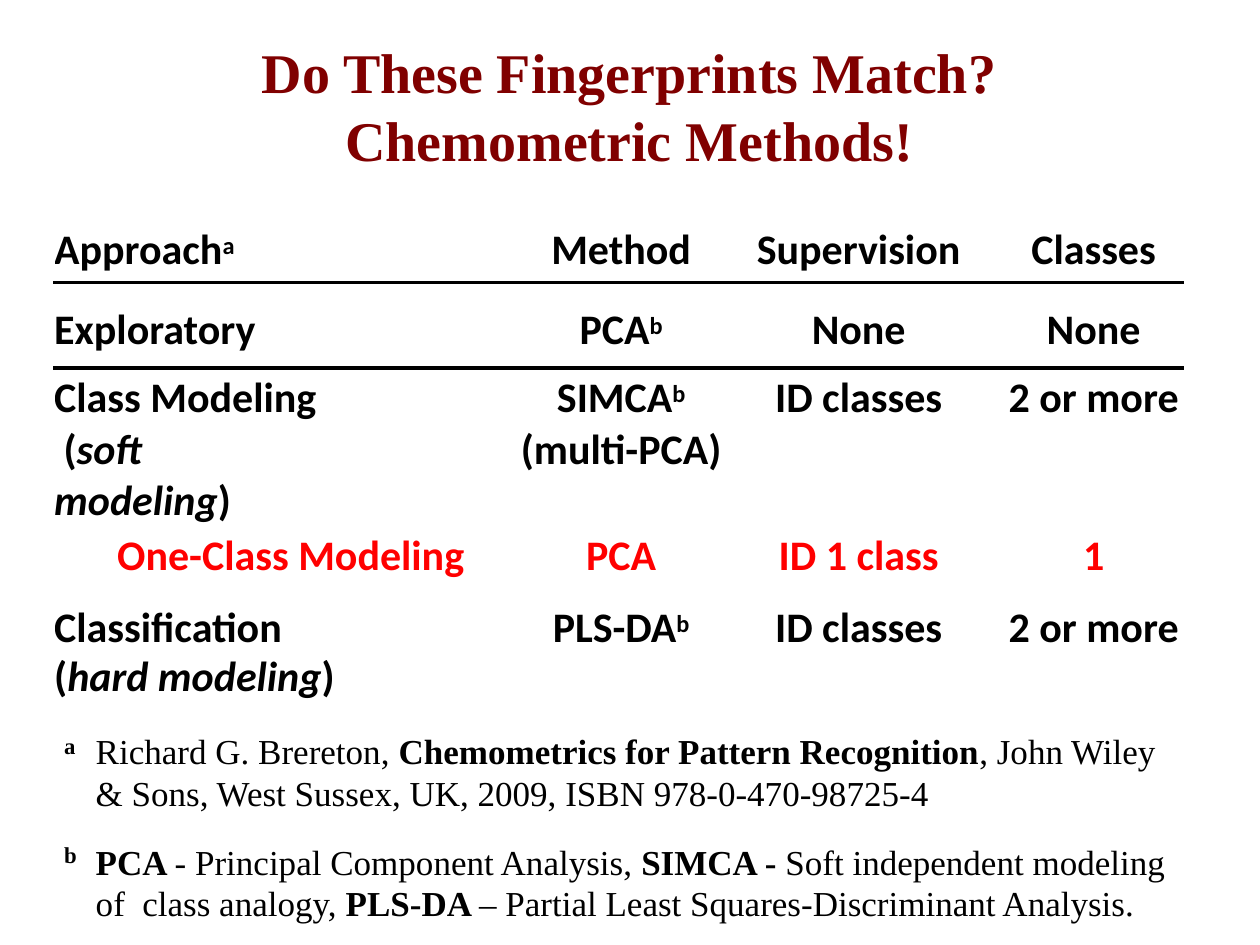
from dataclasses import dataclass

from lxml.etree import SubElement
from pptx import Presentation
from pptx.dml.color import RGBColor
from pptx.enum.text import PP_ALIGN
from pptx.oxml.ns import qn
from pptx.util import Inches, Pt

BLACK, RED, MAROON = "000000", "FF0000", "800000"
SERIF, SANS = "Times New Roman", "Calibri"


@dataclass
class Bit:
    text: str
    bold: bool = True
    slant: bool = False
    sup: bool = False


@dataclass
class Para:
    bits: list[Bit]
    indent: float = 0
    before: float = 0
    line: float | None = None
    align: PP_ALIGN = PP_ALIGN.LEFT


@dataclass
class Row:
    cells: list[list[list[Bit]]]
    high: float
    top: float = 0
    line: float | None = None
    color: str = BLACK
    indent: float = 0
    right: float = 0
    ruled: bool = False


def paint(font, color: str) -> None:
    font.color.rgb = RGBColor.from_string(color)


def write(frame, paras: list[Para], face: str, size: float, color: str) -> None:
    for i, item in enumerate(paras):
        para = frame.add_paragraph() if i else frame.paragraphs[0]
        para.alignment = item.align
        para.space_before = Pt(item.before if i else 0)
        if item.line:
            para.line_spacing = Pt(item.line)
        para._p.get_or_add_pPr().set("marL", str(Inches(item.indent)))
        for bit in item.bits:
            run = para.add_run()
            run.text = bit.text
            font = run.font
            font.name, font.size = face, Pt(size)
            font.bold, font.italic = bit.bold, bit.slant
            paint(font, color)
            if bit.sup:
                run._r.get_or_add_rPr().set("baseline", "24000")


def inset(item, top: float, right: float = 0) -> None:
    item.margin_left = item.margin_bottom = 0
    item.margin_top, item.margin_right = Inches(top), Inches(right)


def add_box(slide, spot: tuple, top: float, paras: list[Para], face: str,
            size: float, color: str, right: float = 0) -> None:
    frame = slide.shapes.add_textbox(*map(Inches, spot)).text_frame
    frame.word_wrap = True
    inset(frame, top, right)
    write(frame, paras, face, size, color)


def rule(cell) -> None:
    line = SubElement(cell._tc.get_or_add_tcPr(), qn("a:lnB"), w=str(Pt(2.25)))
    fill = SubElement(line, qn("a:solidFill"))
    SubElement(fill, qn("a:srgbClr"), val=BLACK)


def add_grid(slide, rows: list[Row]) -> None:
    widths, indents = [3.48, 1.95, 1.95, 1.58], [0, 0.09, 0, 0.16]
    rights = [0, 0, 0.04, 0]
    spot = map(Inches, (0.43, 1.78, sum(widths), sum(r.high for r in rows)))
    grid = slide.shapes.add_table(len(rows), len(widths), *spot).table
    grid.first_row = grid.horz_banding = False
    for col, width in zip(grid.columns, widths):
        col.width = Inches(width)
    for r, row in enumerate(rows):
        grid.rows[r].height = Inches(row.high)
        for c, indent in enumerate(indents):
            cell = grid.cell(r, c)
            inset(cell, row.top, rights[c] if c else row.right)
            if row.ruled:
                rule(cell)
            cell.fill.background()
            if c < len(row.cells):
                align = PP_ALIGN.CENTER if c else PP_ALIGN.LEFT
                paras = [Para(bits, indent if c else row.indent, 0, row.line, align)
                         for bits in row.cells[c]]
                write(cell.text_frame, paras, SANS, 24, row.color)


def plain(*texts: str) -> list[list[list[Bit]]]:
    return [[[Bit(text)]] for text in texts]


def noted(text: str, mark: str) -> list[Bit]:
    return [Bit(text), Bit(mark, sup=True)]


ROWS = [
    Row([[noted("Approach", "a")], *plain("Method", "Supervision", "Classes")],
        0.46, ruled=True),
    Row([[[Bit("Exploratory")]], [noted("PCA", "b")], *plain("None", "None")],
        0.68, top=0.18, ruled=True),
    Row([[[Bit("Class Modeling  ("), Bit("soft modeling", slant=True), Bit(")")]],
         [noted("SIMCA", "b"), [Bit("(multi-PCA)")]],
         *plain("ID classes", "2 or more")], 0.97, top=0.04, right=1.37),
    Row(plain("One-Class Modeling", "PCA", "ID 1 class", "1"),
        0.56, top=0.03, color=RED, indent=0.5),
    Row([[[Bit("Classification")]], [noted("PLS-DA", "b")],
         *plain("ID classes", "2 or more")], 0.49, top=0.04),
    Row([[[Bit("("), Bit("hard modeling", slant=True), Bit(")")]]], 0.37, line=25.2),
]

TITLE = [
    Para([Bit("Do These Fingerprints Match?")], line=38.4, align=PP_ALIGN.CENTER),
    Para([Bit("Chemometric Methods!")], line=38.4, align=PP_ALIGN.CENTER),
]

NOTES = [
    Para([Bit("Richard G. Brereton, ", False),
          Bit("Chemometrics for Pattern Recognition"),
          Bit(", John Wiley  & Sons, West Sussex, UK, 2009, "
              "ISBN 978-0-470-98725-4", False)], 0.01),
    Para([Bit("PCA "), Bit("- Principal Component Analysis, ", False),
          Bit("SIMCA - "), Bit("Soft independent modeling of  class analogy, ", False),
          Bit("PLS-DA "),
          Bit("– Partial Least Squares-Discriminant Analysis.", False)],
         0.01, 15.7, 23.5),
]


def main() -> None:
    deck = Presentation()
    deck.slide_width, deck.slide_height = Inches(10), Inches(7.5)
    slide = deck.slides.add_slide(deck.slide_layouts[6])
    add_grid(slide, ROWS)
    for mark, top in (("a", 5.79), ("b", 6.65)):
        add_box(slide, (0.5, top, 0.13, 0.25), 0.02,
                [Para([Bit(mark)], 0.01)], SERIF, 13, BLACK)
    add_box(slide, (0.75, 5.78, 8.81, 1.56), 0.01, NOTES, SERIF, 20, BLACK, 0.1)
    add_box(slide, (0.44, -0.03, 9.11, 1.49), 0.33, TITLE, SERIF, 32, MAROON)
    deck.save("out.pptx")


if __name__ == "__main__":
    main()
